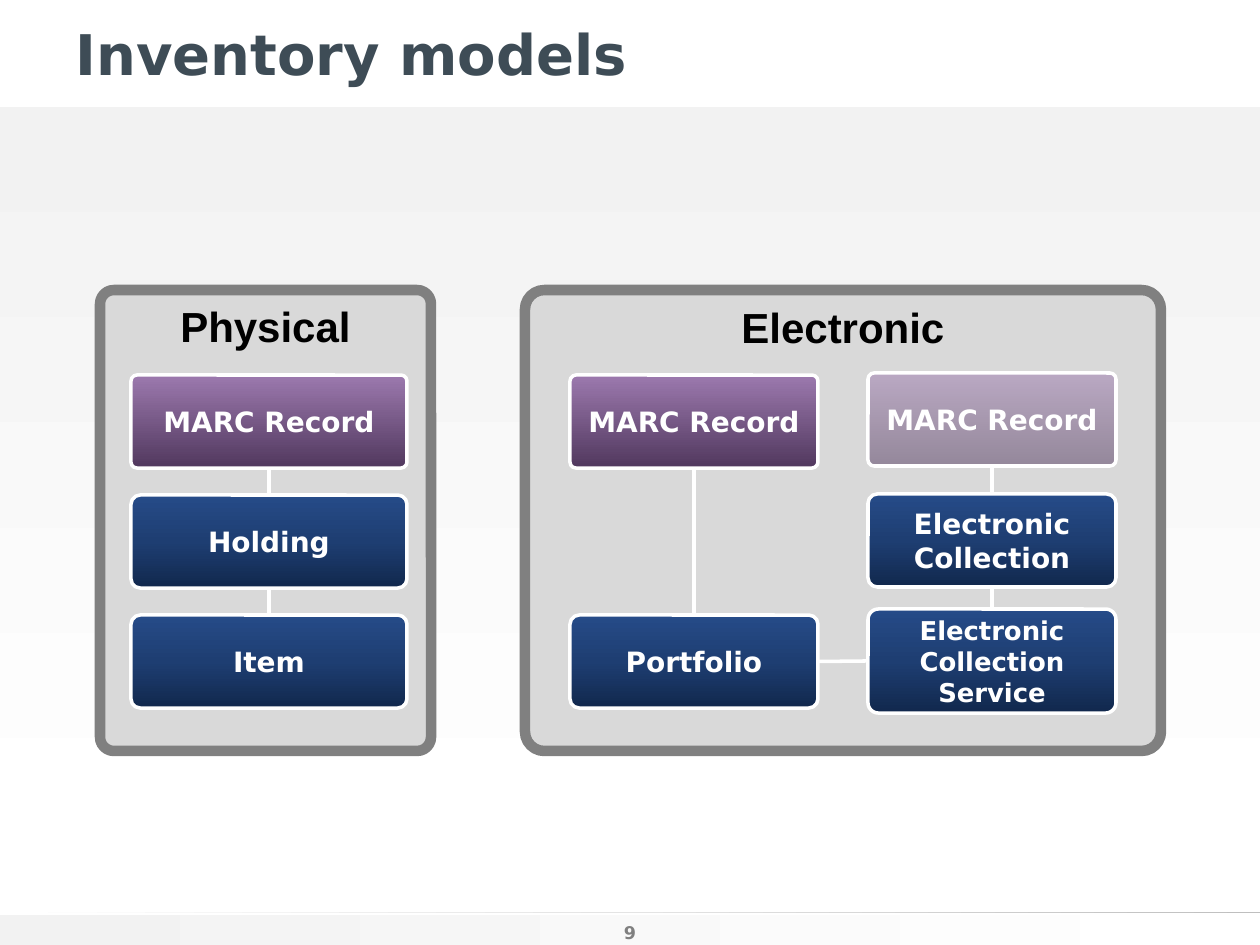
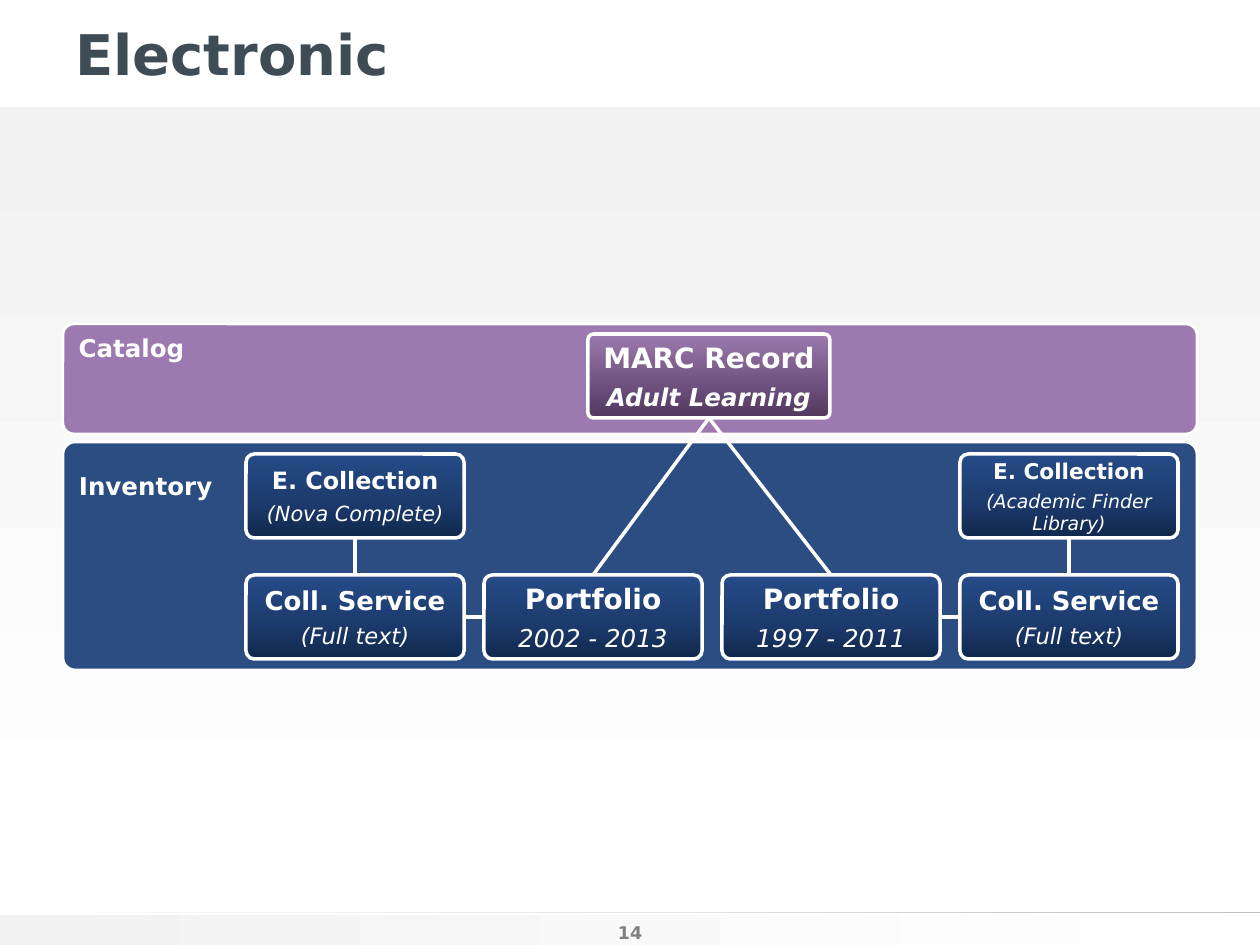
from lxml.etree import SubElement
from pptx import Presentation
from pptx.dml.color import RGBColor
from pptx.enum.shapes import MSO_CONNECTOR as CONNECTOR, MSO_SHAPE as SHAPE
from pptx.enum.text import MSO_ANCHOR as ANCHOR, PP_ALIGN as ALIGN
from pptx.oxml.ns import qn
from pptx.util import Emu, Pt

EMU_PER_PX = 914400 / 126
SLIDE_W, SLIDE_H = 1260, 945

HEADING_FONT, BODY_FONT = "Arial", "DejaVu Sans"
WHITE, BLACK, GREY = "FFFFFF", "000000", "808080"
TITLE_COLOR, PANEL_FILL = "3E4C56", "D9D9D9"
CATALOG_FILL, INVENTORY_FILL = "9C79AE", "2C4D82"

# Gradient stops: position in percent, colour
RECORD_STOPS = [(0, "51385E"), (100, CATALOG_FILL)]
INVENTORY_STOPS = [(0, "11284D"), (50, "1E3E72"), (100, "264B88")]
PALE_STOPS = [(0, "F2F2F2"), (100, WHITE)]
RULE_STOPS = [(0, "BFBFBF"), (50, "E4E4E4"), (100, WHITE)]

RECORD_ROUNDING, INVENTORY_ROUNDING = 0.065, 0.099
TOP, LEFT, BOTTOM, RIGHT = range(4)


def px(length):
    return Emu(round(length * EMU_PER_PX))


def rgb(color):
    return RGBColor.from_string(color)


def set_gradient(shape, stops, angle, opacity=100):
    """Fill with stops along a counter-clockwise angle in degrees."""
    shape.fill.gradient()
    shape.fill.gradient_angle = angle
    stop_list = shape._element.spPr.find(qn("a:gradFill")).find(qn("a:gsLst"))
    for old_stop in list(stop_list):
        stop_list.remove(old_stop)
    for position, color in stops:
        stop = SubElement(stop_list, qn("a:gs"), pos=str(position * 1000))
        value = SubElement(stop, qn("a:srgbClr"), val=color)
        if opacity < 100:
            SubElement(value, qn("a:alpha"), val=str(opacity * 1000))


def write(shape, lines, color, align=ALIGN.CENTER, anchor=ANCHOR.MIDDLE,
          font=BODY_FONT):
    """Each line is (text, size, bold, italic)."""
    frame = shape.text_frame
    frame.word_wrap = True
    frame.vertical_anchor = anchor
    for index, (text, size, bold, italic) in enumerate(lines):
        paragraph = frame.add_paragraph() if index else frame.paragraphs[0]
        paragraph.text = text
        paragraph.alignment = align
        if index:
            paragraph.space_before = Pt(round(size * 0.3, 1))
        paragraph.font.name = font
        paragraph.font.size = Pt(size)
        paragraph.font.bold = bold
        paragraph.font.italic = italic
        paragraph.font.color.rgb = rgb(color)


def add_band(slide, y, height, stops, angle):
    band = slide.shapes.add_shape(SHAPE.RECTANGLE, 0, px(y), px(SLIDE_W), px(height))
    band.shadow.inherit = False
    band.line.fill.background()
    set_gradient(band, stops, angle)


def add_rounded(slide, x, y, width, height, rounding, line_color, line_width):
    rounded = slide.shapes.add_shape(SHAPE.ROUNDED_RECTANGLE,
                                     px(x), px(y), px(width), px(height))
    rounded.shadow.inherit = False
    rounded.adjustments[0] = rounding
    rounded.line.color.rgb = rgb(line_color)
    rounded.line.width = Pt(line_width)
    return rounded


def add_panel(slide, x, width, heading):
    panel = add_rounded(slide, x, 290, width, 461, 0.042, GREY, 6)
    panel.fill.solid()
    panel.fill.fore_color.rgb = rgb(PANEL_FILL)
    write(panel, [(heading, 24, True, False)], BLACK, anchor=ANCHOR.TOP,
          font=HEADING_FONT)


def add_layer(slide, y, height, rounding, color, label, top_inset):
    layer = add_rounded(slide, 63, y, 1134, height, rounding, WHITE, 1.5)
    layer.fill.solid()
    layer.fill.fore_color.rgb = rgb(color)
    layer.text_frame.margin_top = px(top_inset)
    write(layer, [(label, 14, True, False)], WHITE, ALIGN.LEFT, ANCHOR.TOP)


def add_node(slide, x, y, width, height, lines, stops=INVENTORY_STOPS,
             rounding=INVENTORY_ROUNDING, opacity=100):
    node = add_rounded(slide, x, y, width, height, rounding, WHITE, 2)
    set_gradient(node, stops, 90, opacity)
    write(node, lines, WHITE)
    return node


def add_record(slide, x, y, width, height, lines, opacity=100):
    return add_node(slide, x, y, width, height, lines, RECORD_STOPS,
                    RECORD_ROUNDING, opacity)


def join(slide, start, start_side, end, end_side):
    link = slide.shapes.add_connector(CONNECTOR.STRAIGHT, 0, 0, 0, 0)
    link.begin_connect(start, start_side)
    link.end_connect(end, end_side)
    link.line.color.rgb = rgb(WHITE)
    link.line.width = Pt(2)
    SubElement(link._element.spPr, qn("a:effectLst"))


def add_base_slide(deck, title, number):
    slide = deck.slides.add_slide(deck.slide_layouts[6])
    # Body background, footer rule and footer band
    add_band(slide, 915, 30, PALE_STOPS, 0)
    add_band(slide, 107, 736, PALE_STOPS, 270)
    add_band(slide, 912, 1, RULE_STOPS, 180)
    page_number = slide.shapes.add_textbox(px(590), px(886), px(80), px(59))
    page_number.text_frame.margin_bottom = px(2)
    write(page_number, [(str(number), 10, True, False)], GREY, anchor=ANCHOR.BOTTOM)
    heading = slide.shapes.add_textbox(px(63), px(16), px(1134), px(74))
    write(heading, [(title, 32, True, False)], TITLE_COLOR, ALIGN.LEFT)
    return slide


def build_models(deck):
    slide = add_base_slide(deck, "Inventory models", 9)
    add_panel(slide, 525, 636, "Electronic")
    add_panel(slide, 100, 331, "Physical")

    def label(text, size=16):
        return [(text, size, True, False)]

    # Physical chain
    physical_x, physical_w, node_h = 131, 276, 93
    record = add_record(slide, physical_x, 375, physical_w, node_h, label("MARC Record"))
    holding = add_node(slide, physical_x, 495, physical_w, node_h, label("Holding"))
    item = add_node(slide, physical_x, 615, physical_w, node_h, label("Item"))
    join(slide, record, BOTTOM, holding, TOP)
    join(slide, holding, BOTTOM, item, TOP)

    # Electronic: portfolio column
    portfolio_x, collection_x, electronic_w = 570, 868, 248
    record = add_record(slide, portfolio_x, 375, electronic_w, node_h,
                        label("MARC Record"))
    portfolio = add_node(slide, portfolio_x, 615, electronic_w, node_h,
                         label("Portfolio"))
    join(slide, record, BOTTOM, portfolio, TOP)

    # Electronic: collection column
    optional_record = add_record(slide, collection_x, 373, electronic_w, node_h,
                                 label("MARC Record"), opacity=50)
    collection = add_node(slide, collection_x, 494, electronic_w, node_h,
                          label("Electronic Collection"))
    service = add_node(slide, collection_x, 609, electronic_w, 104,
                       label("Electronic Collection Service", 14.8))
    join(slide, optional_record, BOTTOM, collection, TOP)
    join(slide, collection, BOTTOM, service, TOP)
    join(slide, portfolio, RIGHT, service, LEFT)


def build_electronic(deck):
    slide = add_base_slide(deck, "Electronic", 14)
    add_layer(slide, 442, 228, 0.054, INVENTORY_FILL, "Inventory", 25)
    add_layer(slide, 324, 110, 0.101, CATALOG_FILL, "Catalog", 6)

    node_w, node_h = 218, 84
    collection_y, service_y = 454, 575

    def add_inventory(column, y, name, name_size, detail, detail_size):
        return add_node(slide, 246 + 238 * column, y, node_w, node_h,
                        [(name, name_size, True, False),
                         (detail, detail_size, False, True)])

    record = add_record(slide, 588, 334, 242, node_h,
                        [("MARC Record", 16, True, False),
                         ("Adult Learning", 14, True, True)])

    # Bottom row: services outside, portfolios inside
    left_service, right_service = [
        add_inventory(column, service_y, "Coll. Service", 14.8, "(Full text)", 12.9)
        for column in (0, 3)]
    left_portfolio, right_portfolio = [
        add_inventory(column, service_y, "Portfolio", 16, years, 14)
        for column, years in ((1, "2002 - 2013"), (2, "1997 - 2011"))]

    # Collections above their services
    left_collection = add_inventory(0, collection_y, "E. Collection", 13.6,
                                    "(Nova Complete)", 11.9)
    right_collection = add_inventory(3, collection_y, "E. Collection", 12.4,
                                     "(Academic Finder Library)", 10.8)

    for portfolio in (left_portfolio, right_portfolio):
        join(slide, record, BOTTOM, portfolio, TOP)
    join(slide, left_service, TOP, left_collection, BOTTOM)
    join(slide, right_service, TOP, right_collection, BOTTOM)
    join(slide, left_service, RIGHT, left_portfolio, LEFT)
    join(slide, right_portfolio, RIGHT, right_service, LEFT)


def main():
    deck = Presentation()
    deck.slide_width, deck.slide_height = px(SLIDE_W), px(SLIDE_H)
    build_models(deck)
    build_electronic(deck)
    deck.save("out.pptx")


if __name__ == "__main__":
    main()
